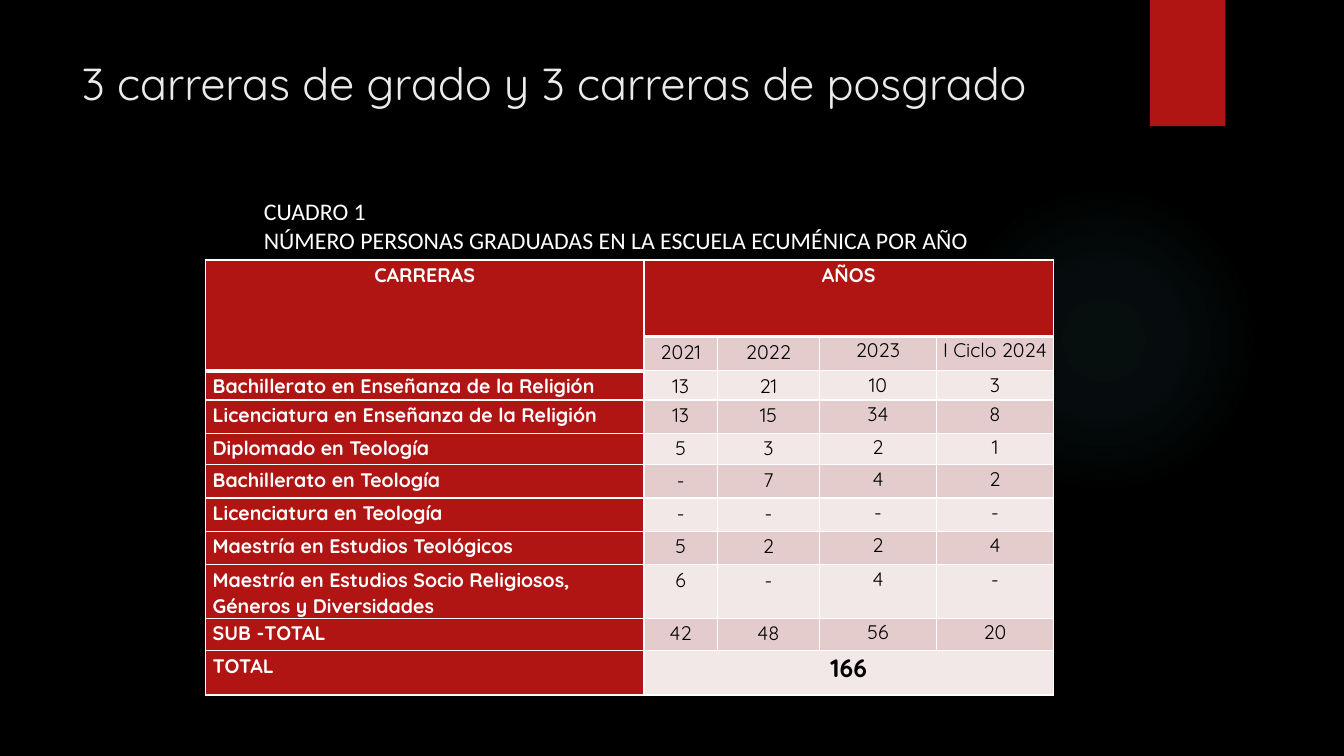
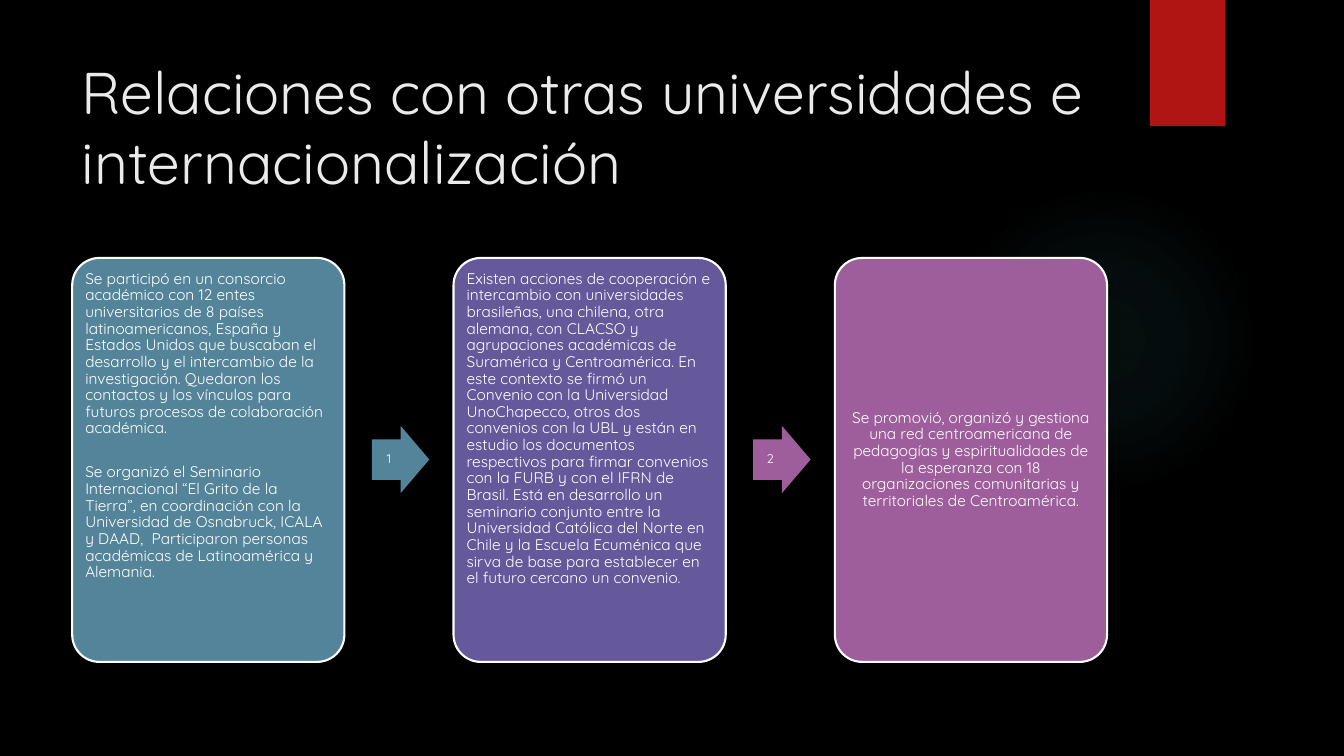
"""Build two slides: a graduates table and a three-step flow on university relations."""
from lxml import etree
from pptx import Presentation
from pptx.dml.color import RGBColor
from pptx.enum import shapes, text
from pptx.oxml import parse_xml
from pptx.util import Cm, Pt

BLACK = RGBColor(0x00, 0x00, 0x00)
WHITE = RGBColor(0xFF, 0xFF, 0xFF)
TITLE = RGBColor(0xEB, 0xEB, 0xEB)
RED = RGBColor(0xB0, 0x15, 0x13)
BAND_DARK = RGBColor(0xE4, 0xCC, 0xCC)
BAND_LIGHT = RGBColor(0xF2, 0xE8, 0xE7)
TEAL = RGBColor(0x54, 0x84, 0x9A)
VIOLET = RGBColor(0x65, 0x59, 0x9C)
MAUVE = RGBColor(0x9E, 0x5E, 0x9B)
FONT = "Quicksand"
NS = "http://schemas.openxmlformats.org/drawingml/2006/main"
MSO, ALIGN, ANCHOR = shapes.MSO_SHAPE, text.PP_ALIGN, text.MSO_ANCHOR


def add_shape(s, kind, left, top, width, height, color):
    """Add a flat preset shape, measured in centimetres, without a line."""
    sp = s.shapes.add_shape(kind, Cm(left), Cm(top), Cm(width), Cm(height))
    sp.shadow.inherit = False
    sp.fill.solid()
    sp.fill.fore_color.rgb = color
    sp.line.fill.background()
    return sp


def style(p, size, color, font=FONT, bold=False, align=ALIGN.LEFT, spacing=1.0):
    """Set the font and layout of a paragraph."""
    p.font.name, p.font.size, p.font.bold = font, Pt(size), bold
    p.font.color.rgb = color
    p.alignment, p.line_spacing = align, spacing


prs = Presentation()
prs.slide_width, prs.slide_height = Cm(33.87), Cm(19.05)
fill = prs.slide_master.background.fill
fill.solid()
fill.fore_color.rgb = BLACK
layout = prs.slide_layouts[5]

slides = []
for title, size, height in [
    ("3 carreras de grado y 3 carreras de posgrado", 32, 3.45),
    ("Relaciones con otras universidades e internacionalización", 42, 3.89),
]:
    s = prs.slides.add_slide(layout)
    sp = s.shapes.title
    sp.left, sp.top, sp.width, sp.height = Cm(1.8), Cm(1.27), Cm(26.14), Cm(height)
    tf = sp.text_frame
    tf.text = title
    tf.word_wrap, tf.auto_size = True, text.MSO_AUTO_SIZE.NONE
    tf.vertical_anchor = ANCHOR.TOP
    style(tf.paragraphs[0], size, TITLE)
    slides.append(s)
table_slide, flow_slide = slides

glow = add_shape(table_slide, MSO.OVAL, 23.9, 4.65, 7.82, 7.82, BLACK)
stops = "".join(
    f'<a:gs pos="{pos}000"><a:srgbClr val="50B9C1"><a:alpha val="{alpha}000"/></a:srgbClr></a:gs>'
    for pos, alpha in [(0, 7), (36, 6), (69, 0)]
)
gradient = parse_xml(
    f'<a:gradFill xmlns:a="{NS}" rotWithShape="1"><a:gsLst>{stops}</a:gsLst><a:path path="circle">'
    '<a:fillToRect l="50000" t="50000" r="50000" b="50000"/></a:path></a:gradFill>'
)
solid = glow.element.spPr.find(f"{{{NS}}}solidFill")
solid.getparent().replace(solid, gradient)
ribbon = add_shape(table_slide, MSO.RECTANGLE, 28.98, 0, 1.9, 3.18, RED)
for i, sp in enumerate([glow, ribbon]):
    sp.element.xpath(".//p:cNvPr")[0].set("id", str(100 + i))
    layout.shapes.element.insert(2 + i, sp.element)

rows = [
    ("CARRERAS", "AÑOS", "", "", ""),
    ("", "2021", "2022", "2023", "I Ciclo 2024"),
    ("Bachillerato en Enseñanza de la Religión", "13", "21", "10", "3"),
    ("Licenciatura en Enseñanza de la Religión", "13", "15", "34", "8"),
    ("Diplomado en Teología", "5", "3", "2", "1"),
    ("Bachillerato en Teología", "-", "7", "4", "2"),
    ("Licenciatura en Teología", "-", "-", "-", "-"),
    ("Maestría en Estudios Teológicos", "5", "2", "2", "4"),
    ("Maestría en Estudios Socio Religiosos, Géneros y Diversidades", "6", "-", "4", "-"),
    ("SUB -TOTAL", "42", "48", "56", "20"),
    ("TOTAL", "166", "", "", ""),
]
widths = [11.05, 1.85, 2.57, 2.95, 2.95]
heights = [1.93, 0.86, 0.74, 0.84, 0.79, 0.84, 0.84, 0.84, 1.19, 0.81, 1.12]
last = len(rows) - 1
table = table_slide.shapes.add_table(
    len(rows), len(widths), Cm(5.18), Cm(6.55), Cm(sum(widths)), Cm(sum(heights))
).table
table.first_row = table.horz_banding = False
for column, width in zip(table.columns, widths):
    column.width = Cm(width)
for row, height in zip(table.rows, heights):
    row.height = Cm(height)
for r, values in enumerate(rows):
    for c, value in enumerate(values):
        cell = table.cell(r, c)
        header = r == 0 or c == 0
        total = r == last and c > 0
        tight = c > 2 or total
        cell.margin_left = cell.margin_right = Cm(0 if tight else 0.18)
        cell.margin_top, cell.margin_bottom = Cm(0 if tight else 0.03), 0
        thick_bottom = (r == 0 and c > 0) or (r < 2 and c == 0)
        thick_top = (r == 1 and c > 0) or (r == 2 and c == 0)
        for side, thick in [("L", False), ("R", False), ("T", thick_top), ("B", thick_bottom)]:
            ln = etree.SubElement(cell._tc.get_or_add_tcPr(), f"{{{NS}}}ln{side}", w=str(Pt(3 if thick else 1)))
            line_fill = etree.SubElement(ln, f"{{{NS}}}solidFill")
            etree.SubElement(line_fill, f"{{{NS}}}srgbClr", val=str(WHITE))
        cell.fill.solid()
        cell.fill.fore_color.rgb = RED if header else BAND_DARK if r % 2 else BAND_LIGHT
        p = cell.text_frame.paragraphs[0]
        p.text = value
        style(p, 18 if total else 14, WHITE if header else BLACK, bold=header or total,
              align=ALIGN.LEFT if c == 0 and r > 0 else ALIGN.CENTER, spacing=1.07)
table.cell(0, 0).merge(table.cell(1, 0))
for r in (0, last):
    table.cell(r, 1).merge(table.cell(r, 4))

tf = table_slide.shapes.add_textbox(Cm(6.4), Cm(4.83), Cm(19.08), Cm(1.7)).text_frame
tf.word_wrap, tf.vertical_anchor = True, ANCHOR.MIDDLE
tf.text = "CUADRO 1\nNÚMERO PERSONAS GRADUADAS EN LA ESCUELA ECUMÉNICA POR AÑO"
for p in tf.paragraphs:
    style(p, 17, WHITE, font="Calibri")

cards = [
    (TEAL, ALIGN.LEFT, ANCHOR.TOP, [
        "Se participó en un consorcio académico con 12 entes universitarios de 8 países "
        "latinoamericanos, España y Estados Unidos que buscaban el desarrollo y el intercambio "
        "de la investigación. Quedaron los contactos y los vínculos para futuros procesos de "
        "colaboración académica.",
        "Se organizó el Seminario Internacional “El Grito de la Tierra”, en coordinación con la "
        "Universidad de Osnabruck, ICALA y DAAD,  Participaron personas académicas de "
        "Latinoamérica y Alemania."]),
    (VIOLET, ALIGN.LEFT, ANCHOR.TOP, [
        "Existen acciones de cooperación e intercambio con universidades brasileñas, una chilena, "
        "otra alemana, con CLACSO y agrupaciones académicas de Suramérica y Centroamérica. En "
        "este contexto se firmó un Convenio con la Universidad UnoChapecco, otros dos convenios "
        "con la UBL y están en estudio los documentos respectivos para firmar convenios con la "
        "FURB y con el IFRN de Brasil. Está en desarrollo un seminario conjunto entre la "
        "Universidad Católica del Norte en Chile y la Escuela Ecuménica que sirva de base para "
        "establecer en el futuro cercano un convenio."]),
    (MAUVE, ALIGN.CENTER, ANCHOR.MIDDLE, [
        "Se promovió, organizó y gestiona una red centroamericana de pedagogías y "
        "espiritualidades de la esperanza con 18 organizaciones comunitarias y territoriales de "
        "Centroamérica."]),
]
arrow_colors = [TEAL, MAUVE]
for i, (color, align, anchor, paragraphs) in enumerate(cards):
    left = 1.82 + i * 9.61
    sp = add_shape(flow_slide, MSO.ROUNDED_RECTANGLE, left, 6.5, 6.86, 10.18, color)
    sp.adjustments[0] = 0.1
    sp.line.color.rgb, sp.line.width = WHITE, Pt(1.5)
    tf = sp.text_frame
    tf.word_wrap, tf.vertical_anchor = True, anchor
    tf.margin_left = tf.margin_right = tf.margin_top = tf.margin_bottom = Cm(0.13)
    tf.text = "\n".join(paragraphs)
    for n, p in enumerate(tf.paragraphs):
        style(p, 11, WHITE, align=align, spacing=0.9)
        if n:
            p.space_before = Pt(19.5)
    if i < len(arrow_colors):
        sp = add_shape(flow_slide, MSO.RIGHT_ARROW, left + 7.55, 10.73, 1.45, 1.7, arrow_colors[i])
        sp.adjustments[0], sp.adjustments[1] = 0.6, 0.5
        tf = sp.text_frame
        tf.margin_left = tf.margin_top = tf.margin_bottom = 0
        tf.margin_right = Cm(0.15)
        tf.vertical_anchor = ANCHOR.MIDDLE
        tf.text = str(i + 1)
        style(tf.paragraphs[0], 9, WHITE, align=ALIGN.CENTER, spacing=0.9)

prs.save("out.pptx")
